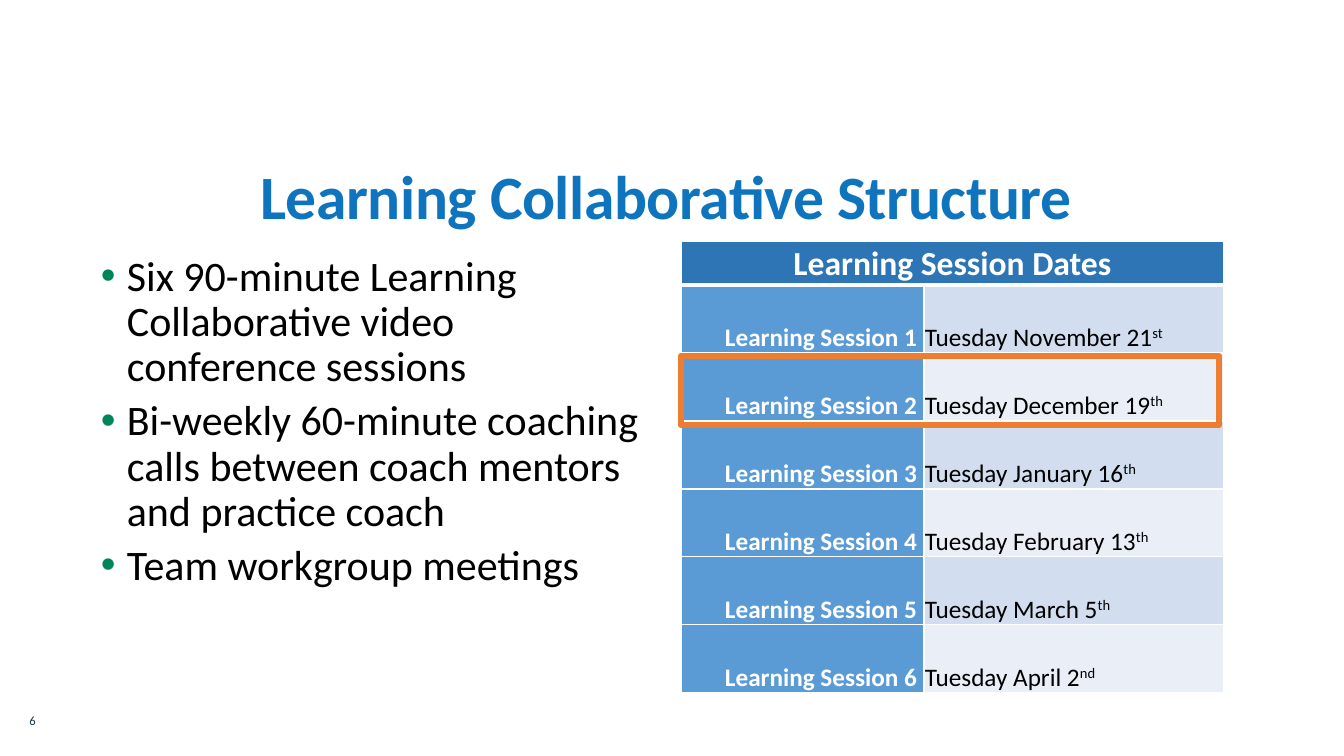
from dataclasses import dataclass

from lxml import etree
from pptx import Presentation, util as u
from pptx.dml.color import RGBColor
from pptx.enum import shapes, text
from pptx.oxml import ns

EMU_PER_PX = 12192000 / 1344
FONT = "Calibri"
COLORS = {
    "title": "0E74BD", "bullet": "008558", "number": "1B3749",
    "black": "000000", "white": "FFFFFF", "header": "2E75B6",
    "label": "5B9BD5", "odd": "D2DEEF", "even": "EAEFF7", "highlight": "ED7D31",
}
ALIGN, ANCHOR = text.PP_ALIGN, text.MSO_ANCHOR


@dataclass(frozen=True)
class Box:
    left: int
    top: int
    width: int
    height: int

    def emu(self) -> tuple:
        return tuple(px(v) for v in (self.left, self.top, self.width, self.height))


@dataclass(frozen=True)
class Session:
    date: str
    suffix: str


@dataclass(frozen=True)
class CellLook:
    fill: str
    align: ALIGN
    margins: tuple


SESSIONS = [
    Session("Tuesday November 21", "st"),
    Session("Tuesday December 19", "th"),
    Session("Tuesday January 16", "th"),
    Session("Tuesday February 13", "th"),
    Session("Tuesday March 5", "th"),
    Session("Tuesday April 2", "nd"),
]
BULLETS = [
    "Six 90-minute Learning Collaborative video conference sessions",
    "Bi-weekly 60-minute coaching calls between coach mentors and practice coach",
    "Team workgroup meetings",
]
TABLE = Box(681, 241, 543, 452)
COLUMNS = (243, 300)
HEADER_ROW, SESSION_ROW = 44, 68
WIDE, TIGHT = (7, 0, 7, 0), (1, 1, 1, 0)


def px(value: float) -> u.Emu:
    return u.Emu(round(value * EMU_PER_PX))


def rgb(name: str) -> RGBColor:
    return RGBColor.from_string(COLORS[name])


def set_all(target, values: dict) -> None:
    for name, value in values.items():
        setattr(target, name, value)


def add_run(p, words: str, size: int, color: str, bold: bool = False, **attrs: str):
    """Append a run; attrs are extra rPr attributes such as baseline or spc."""
    r = p.add_run()
    r.text = words
    set_all(r.font, {"size": u.Pt(size), "name": FONT, "bold": bold})
    r.font.color.rgb = rgb(color)
    for name, value in attrs.items():
        r._r.get_or_add_rPr().set(name, value)


def add_text_box(s, box: Box, anchor):
    tf = s.shapes.add_textbox(*box.emu()).text_frame
    set_all(tf, {"word_wrap": True, "vertical_anchor": anchor})
    return tf


def add_bullet(p) -> None:
    pPr = p._p.get_or_add_pPr()
    pPr.set("marL", str(px(26)))
    pPr.set("indent", str(-px(26)))
    color = etree.SubElement(pPr, ns.qn("a:buClr"))
    etree.SubElement(color, ns.qn("a:srgbClr"), val=COLORS["bullet"])
    etree.SubElement(pPr, ns.qn("a:buFont"), typeface="Arial")
    etree.SubElement(pPr, ns.qn("a:buChar"), char="•")


def set_borders(cell, top: int = 1, bottom: int = 1) -> None:
    tcPr = cell._tc.get_or_add_tcPr()
    widths = {"a:lnL": 1, "a:lnR": 1, "a:lnT": top, "a:lnB": bottom}
    for i, (tag, width) in enumerate(widths.items()):
        ln = etree.Element(ns.qn(tag), w=str(u.Pt(width)))
        fill = etree.SubElement(ln, ns.qn("a:solidFill"))
        etree.SubElement(fill, ns.qn("a:srgbClr"), val=COLORS["white"])
        tcPr.insert(i, ln)


def style_cell(cell, look: CellLook):
    """Apply fill, margins and alignment; return the cell's paragraph."""
    cell.fill.solid()
    cell.fill.fore_color.rgb = rgb(look.fill)
    sides = ("margin_left", "margin_top", "margin_right", "margin_bottom")
    set_all(cell, dict(zip(sides, map(px, look.margins))))
    cell.vertical_anchor = ANCHOR.BOTTOM
    p = cell.text_frame.paragraphs[0]
    p.alignment = look.align
    return p


def add_title(s) -> None:
    p = add_text_box(s, Box(61, 160, 1210, 80), ANCHOR.MIDDLE).paragraphs[0]
    set_all(p, {"alignment": ALIGN.CENTER, "line_spacing": 0.9})
    add_run(p, "Learning Collaborative Structure", 44, "title", True, spc="-30")


def add_body(s) -> None:
    tf = add_text_box(s, Box(91, 250, 562, 434), ANCHOR.TOP)
    for i, words in enumerate(BULLETS):
        p = tf.add_paragraph() if i else tf.paragraphs[0]
        add_bullet(p)
        set_all(p, {"line_spacing": 0.9, "space_after": u.Pt(6)})
        add_run(p, words, 30, "black")


def add_page_number(s) -> None:
    p = add_text_box(s, Box(16, 708, 33, 25), ANCHOR.BOTTOM).paragraphs[0]
    p.alignment = ALIGN.CENTER
    add_run(p, "6", 9, "number")


def add_sessions(s) -> None:
    table = s.shapes.add_table(len(SESSIONS) + 1, len(COLUMNS), *TABLE.emu()).table
    set_all(table, {"first_row": False, "horz_banding": False})
    for column, width in zip(table.columns, COLUMNS):
        column.width = px(width)
    for i, row in enumerate(table.rows):
        row.height = px(SESSION_ROW if i else HEADER_ROW)
        for cell in row.cells:
            set_borders(cell, top=3 if i == 1 else 1, bottom=1 if i else 3)

    header = table.cell(0, 0)
    header.merge(table.cell(0, 1))
    p = style_cell(header, CellLook("header", ALIGN.CENTER, WIDE))
    add_run(p, "Learning Session Dates", 24, "white", True)

    for i, session in enumerate(SESSIONS, 1):
        p = style_cell(table.cell(i, 0), CellLook("label", ALIGN.RIGHT, WIDE))
        add_run(p, f"Learning Session {i}", 18, "white", True)
        band = "odd" if i % 2 else "even"
        p = style_cell(table.cell(i, 1), CellLook(band, ALIGN.LEFT, TIGHT))
        add_run(p, session.date, 18, "black")
        add_run(p, session.suffix, 18, "black", baseline="30000")


def add_highlight(s) -> None:
    box = Box(TABLE.left, 356, 538, 69)
    sp = s.shapes.add_shape(shapes.MSO_SHAPE.RECTANGLE, *box.emu())
    sp.shadow.inherit = False
    sp.fill.background()
    sp.line.color.rgb = rgb("highlight")
    sp.line.width = u.Pt(4.5)


def main() -> None:
    prs = Presentation()
    set_all(prs, {"slide_width": px(1344), "slide_height": px(756)})
    s = prs.slides.add_slide(prs.slide_layouts[6])
    for draw in (add_title, add_body, add_page_number, add_sessions, add_highlight):
        draw(s)
    prs.save("out.pptx")


if __name__ == "__main__":
    main()
